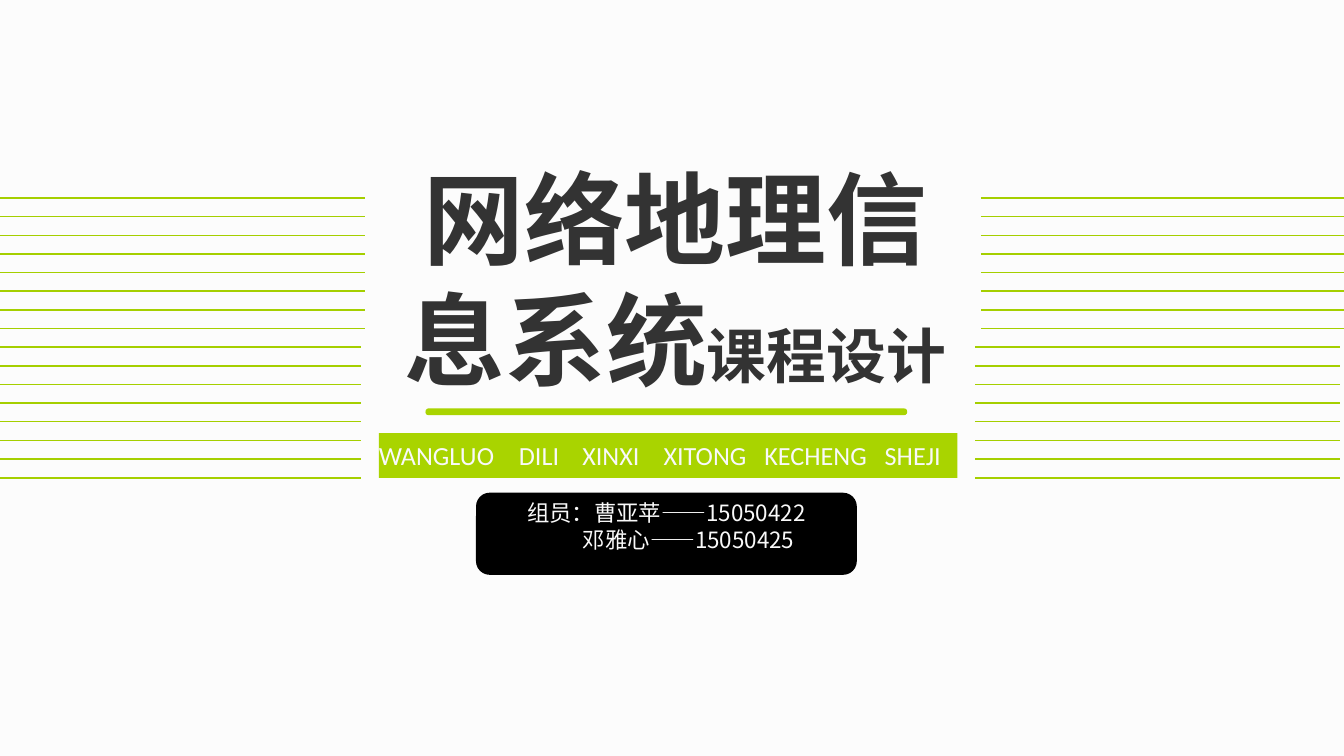
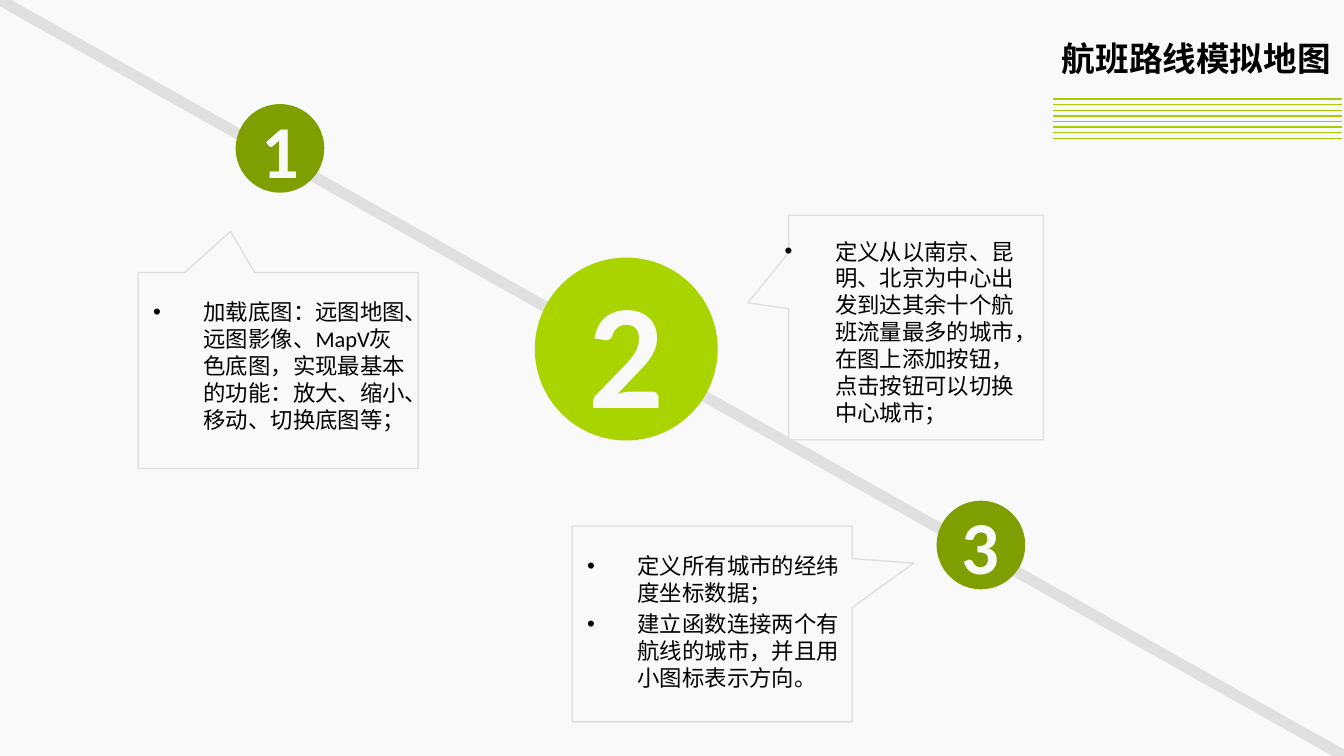
from lxml import etree
from pptx import Presentation
from pptx.dml.color import RGBColor
from pptx.enum.shapes import MSO_CONNECTOR, MSO_SHAPE
from pptx.enum.text import MSO_ANCHOR, PP_ALIGN
from pptx.oxml.ns import qn
from pptx.util import Pt

STRAIGHT = MSO_CONNECTOR.STRAIGHT
RECT, ROUND_RECT = MSO_SHAPE.RECTANGLE, MSO_SHAPE.ROUNDED_RECTANGLE
OVAL, CALLOUT = MSO_SHAPE.OVAL, MSO_SHAPE.RECTANGULAR_CALLOUT
LEFT, CENTER, RIGHT = PP_ALIGN.LEFT, PP_ALIGN.CENTER, PP_ALIGN.RIGHT
TOP, MIDDLE = MSO_ANCHOR.TOP, MSO_ANCHOR.MIDDLE

COVER_BACK = RGBColor(0xFC, 0xFC, 0xFC)
PALE = RGBColor(0xF9, 0xF9, 0xF9)
GREEN = RGBColor(0xA9, 0xD4, 0x00)
DARK_GREEN = RGBColor(0x7F, 0x9F, 0x00)
STRIPE_GREEN = RGBColor(0xA5, 0xCF, 0x00)
LIGHT_GRAY = RGBColor(0xE0, 0xE0, 0xE0)
CHARCOAL = RGBColor(0x33, 0x33, 0x33)
BLACK = RGBColor(0x00, 0x00, 0x00)

BODY_FONT, MEMBER_FONT = "Calibri", "Noto Sans CJK KR"
WIDTH, HEIGHT = 720, 405
INDENT = 27


# Shared parts
def add_page(deck, back):
    page = deck.slides.add_slide(deck.slide_layouts[6])
    page.background.fill.solid()
    page.background.fill.fore_color.rgb = back
    return page


def add_figure(page, kind, box, fill=None, outline=None, adjust=()):
    figure = page.shapes.add_shape(kind, *map(Pt, box))
    figure.shadow.inherit = False
    if fill is None:
        figure.fill.background()
    else:
        figure.fill.solid()
        figure.fill.fore_color.rgb = fill
    if outline is None:
        figure.line.fill.background()
    else:
        figure.line.color.rgb = outline
        figure.line.width = Pt(0.75)
    for index, value in enumerate(adjust):
        figure.adjustments[index] = value
    return figure


def add_line(page, start, end, color, weight=0.75):
    line = page.shapes.add_connector(STRAIGHT, *map(Pt, start + end))
    line.line.color.rgb = color
    line.line.width = Pt(weight)
    etree.SubElement(line._element.spPr, qn("a:effectLst"))


def add_stripes(page, left, top, width, gap, count=8):
    for index in range(count):
        y = top + gap * index
        add_line(page, (left, y), (left + width, y), STRIPE_GREEN)


def add_span(para, text, size, color, bold=False, font=BODY_FONT):
    span = para.add_run()
    span.text = text
    span.font.size = Pt(size)
    span.font.bold = bold
    span.font.color.rgb = color
    span.font.name = font
    etree.SubElement(span._r.get_or_add_rPr(), qn("a:ea"), typeface=font)


def add_text_box(page, box, anchor=TOP):
    frame = page.shapes.add_textbox(*map(Pt, box)).text_frame
    frame.word_wrap = True
    frame.vertical_anchor = anchor
    return frame


def add_paras(frame, count, align):
    paras = [frame.paragraphs[0]]
    paras += [frame.add_paragraph() for _ in range(count - 1)]
    for para in paras:
        para.alignment = align
    return paras


# Cover
def add_cover_title(page, box):
    left, top, width, height = box
    para, = add_paras(add_text_box(page, box), 1, CENTER)
    add_span(para, "网络地理信息系统", 54, CHARCOAL, True)
    add_span(para, "课程设计", 32, CHARCOAL, True)
    underline = (left + 25, top + height, 258, 3.6)
    add_figure(page, ROUND_RECT, underline, GREEN, adjust=[0.44])


def add_pinyin_band(page, box):
    words = ["WANGLUO", "DILI", "XINXI", "XITONG", "KECHENG", "SHEJI"]
    stops = [75, 109, 152.5, 206.5, 271]
    frame = add_figure(page, RECT, box, GREEN).text_frame
    frame.word_wrap = True
    frame.margin_left = frame.margin_right = 0
    frame.vertical_anchor = MIDDLE
    para, = add_paras(frame, 1, LEFT)
    add_span(para, "\t".join(words), 14, PALE)
    tabs = etree.SubElement(para._p.get_or_add_pPr(), qn("a:tabLst"))
    for stop in stops:
        etree.SubElement(tabs, qn("a:tab"), pos=str(Pt(stop)), algn="l")


def add_members(page, box):
    left, top, width, height = box
    add_figure(page, ROUND_RECT, box, BLACK)
    frame = add_text_box(page, (left - 3, top, width + 6, height + 29))
    members = ["组员：曹亚苹——15050422", "邓雅心——15050425"]
    paras = add_paras(frame, len(members), CENTER)
    for para, member in zip(paras, members):
        add_span(para, member, 12, PALE, font=MEMBER_FONT)
    paras[1]._p.get_or_add_pPr().set("marL", str(Pt(24)))


def build_cover(deck):
    page = add_page(deck, COVER_BACK)
    add_cover_title(page, (203, 80.6, 317.5, 138.2))
    add_pinyin_band(page, (203, 232, 310, 24))
    add_members(page, (255, 264, 204, 44))
    # Upper and lower stripes on both sides
    for left, top, width in [(0, 106, 195.5), (525.5, 106, 194.5),
                             (0, 186, 193.5), (522.5, 186, 195.5)]:
        add_stripes(page, left, top, width, 10)


# Route map page
def add_heading(page, box):
    left, top, width, height = box
    para, = add_paras(add_text_box(page, box), 1, RIGHT)
    add_span(para, "航班路线模拟地图", 18, BLACK, True)
    add_stripes(page, left + 38.5, top + 36.5, 155, 3)


def add_step(page, number, center, diameter, fill, size):
    x, y = center
    half = diameter / 2
    add_figure(page, OVAL, (x - half, y - half, diameter, diameter), fill)
    label = (x - size, y - size * 0.63, size * 2, size * 1.26)
    para, = add_paras(add_text_box(page, label, MIDDLE), 1, CENTER)
    add_span(para, number, size, PALE, True)


def add_note(page, box, pointer, text_box, items):
    add_figure(page, CALLOUT, box, outline=LIGHT_GRAY, adjust=pointer)
    paras = add_paras(add_text_box(page, text_box), len(items), LEFT)
    for para, item in zip(paras, items):
        para.space_before = Pt(2.4)
        add_span(para, item, 12, BLACK)
        settings = para._p.get_or_add_pPr()
        settings.set("marL", str(Pt(INDENT)))
        settings.set("indent", str(-Pt(INDENT)))
        etree.SubElement(settings, qn("a:buFont"), typeface="Arial")
        etree.SubElement(settings, qn("a:buChar"), char="•")


def build_route_page(deck):
    page = add_page(deck, PALE)
    add_line(page, (0, 0), (WIDTH, HEIGHT), LIGHT_GRAY, 6)
    add_heading(page, (525.6, 16.6, 194.4, 29))
    # Numbered steps along the route
    for number, center, diameter, fill, size in [
            ("1", (150, 79.5), 47.5, DARK_GREEN, 40),
            ("2", (335.5, 187), 98, GREEN, 80),
            ("3", (525.5, 292), 47.5, DARK_GREEN, 40)]:
        add_step(page, number, center, diameter, fill, size)
    # Notes that explain the steps
    add_note(page, (74, 146, 150, 105), (-0.17, -0.71),
             (75, 156.2, 150, 82),
             ["加载底图：远图地图、远图影像、MapV灰色底图，"
              "实现最基本的功能：放大、缩小、移动、切换底图等；"])
    add_note(page, (422.5, 115.3, 136.5, 120.3), (-0.66, -0.11),
             (413.3, 123.8, 144.7, 112.3),
             ["定义从以南京、昆明、北京为中心出发到达其余十个航班流量最多的城市，"
              "在图上添加按钮，点击按钮可以切换中心城市；"])
    add_note(page, (306.5, 281.8, 150, 105), (0.72, -0.31),
             (307.5, 292.3, 150, 82),
             ["定义所有城市的经纬度坐标数据；",
              "建立函数连接两个有航线的城市，并且用小图标表示方向。"])


def main():
    deck = Presentation()
    deck.slide_width, deck.slide_height = Pt(WIDTH), Pt(HEIGHT)
    build_cover(deck)
    build_route_page(deck)
    deck.save("out.pptx")


if __name__ == "__main__":
    main()
